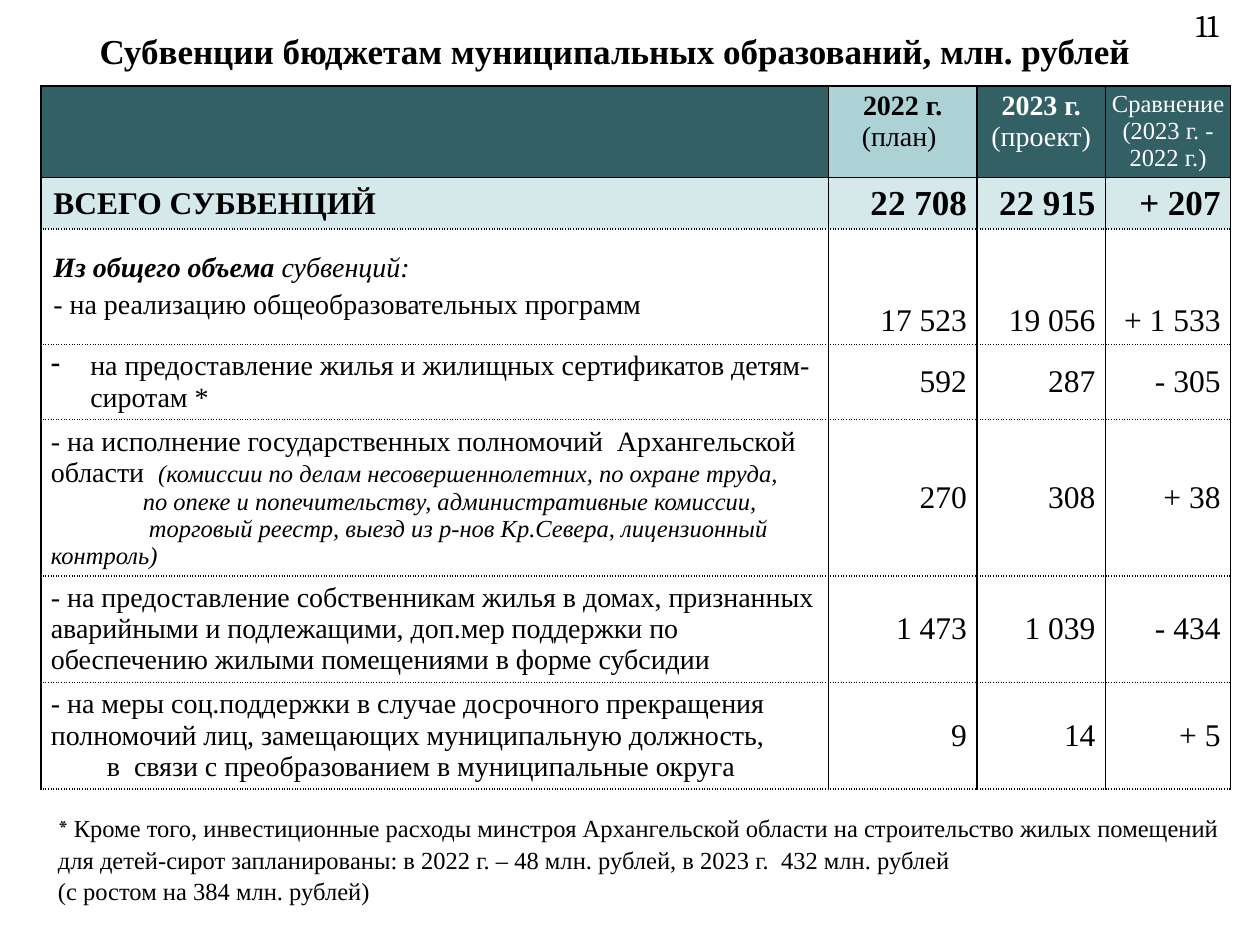
from lxml.etree import SubElement
from pptx import Presentation
from pptx.dml.color import RGBColor
from pptx.enum.text import MSO_ANCHOR, MSO_AUTO_SIZE, PP_ALIGN
from pptx.oxml import parse_xml
from pptx.oxml.ns import nsdecls, qn
from pptx.util import Pt

HUES = {"ink": "000000", "white": "FFFFFF", "dark": "326065",
        "mid": "ADD2D6", "pale": "D6E9EA"}
LEFT, MID, RIGHT = PP_ALIGN.LEFT, PP_ALIGN.CENTER, PP_ALIGN.RIGHT


class Deck:
    """Style and current slide."""
    serif, num = "Times New Roman", "Cambria"

    def __init__(self):
        self.prs = Presentation()
        self.prs.slide_width, self.prs.slide_height = Pt(720), Pt(540)
        self.slide = self.prs.slides.add_slide(self.prs.slide_layouts[1])

    def hue(self, name):
        return RGBColor.from_string(HUES[name])

    def run(self, para, text, size, style="", hue="ink", font=None):
        for i, part in enumerate(text.split("\n")):
            if i:
                para.add_line_break()
            run = para.add_run()
            run.text = part
            face = run.font
            face.name, face.size = font or self.serif, Pt(size)
            face.bold, face.italic = "b" in style, "i" in style
            face.color.rgb = self.hue(hue)

    def para(self, frame, runs, align=LEFT, first=True, gap=0,
             hang=0, indent=0, mark=None):
        para = frame.paragraphs[0] if first else frame.add_paragraph()
        para.alignment, para.space_before = align, Pt(gap)
        props = para._p.get_or_add_pPr()
        props.set("marL", str(Pt(hang)))
        props.set("indent", str(Pt(indent)))
        if mark:
            SubElement(props, qn("a:buChar")).set("char", mark)
        else:
            SubElement(props, qn("a:buNone"))
        for item in runs:
            self.run(para, *item)
        return para

    def place(self, shape, box, anchor):
        shape.left, shape.top, shape.width, shape.height = map(Pt, box)
        frame = shape.text_frame
        frame.word_wrap, frame.auto_size = True, MSO_AUTO_SIZE.NONE
        frame.vertical_anchor = anchor
        return frame

    def title(self, text, box):
        frame = self.place(self.slide.shapes.title, box, MSO_ANCHOR.MIDDLE)
        self.para(frame, [(text, 20, "b")], MID)

    def body(self, paras, box):
        frame = self.place(self.slide.placeholders[1], box, MSO_ANCHOR.TOP)
        for i, runs in enumerate(paras):
            self.para(frame, runs, first=i == 0).line_spacing = 1.07

    def label(self, text, box):
        shape = self.slide.shapes.add_textbox(*map(Pt, box))
        frame = self.place(shape, box, MSO_ANCHOR.BOTTOM)
        self.para(frame, [(text, 18, "", "ink", self.num)], RIGHT)

    def table(self, left, top, cols, rows):
        shape = self.slide.shapes.add_table(
            len(rows), len(cols), Pt(left), Pt(top),
            Pt(sum(cols)), Pt(sum(rows)))
        grid = shape.table
        grid.first_row = grid.horz_banding = False
        for col, width in zip(grid.columns, cols):
            col.width = Pt(width)
        for row, height in zip(grid.rows, rows):
            row.height = Pt(height)
        return grid

    def cell(self, cell, paras, inset, anchor, fill, dashes):
        cell.vertical_anchor = anchor
        (cell.margin_left, cell.margin_top,
         cell.margin_right, cell.margin_bottom) = map(Pt, inset)
        if fill:
            cell.fill.solid()
            cell.fill.fore_color.rgb = self.hue(fill)
        else:
            cell.fill.background()
        for i, item in enumerate(paras):
            self.para(cell.text_frame, first=i == 0, **item)
        # Borders come before the fill: left, right, top, bottom
        props = cell._tc.get_or_add_tcPr()
        for i, (side, dash) in enumerate(zip("LRTB", dashes)):
            props.insert(i, parse_xml(
                f'<a:ln{side} {nsdecls("a")} w="{Pt(1)}"><a:solidFill>'
                f'<a:srgbClr val="{HUES["ink"]}"/></a:solidFill>'
                f'<a:prstDash val="{dash}"/></a:ln{side}>'))


HEAD = [
    ([], "dark"),
    ([[("2022 г. ", 16, "b"), ("(план) ", 16)]], "mid"),
    ([[("2023 г.", 16, "b", "white")], [("(проект)", 16, "", "white")]], "dark"),
    ([[("Сравнение (2023 г. -\n2022 г.)", 14, "", "white")]], "dark"),
]

# Each row: paragraphs of the first cell, then the figures
ROWS = [
    ([dict(runs=[("ВСЕГО СУБВЕНЦИЙ", 18, "b")])],
     ["22 708", "22 915", "+ 207"]),
    ([dict(runs=[("Из общего объема ", 16, "bi"), ("субвенций:", 16, "i")]),
      dict(runs=[("- на реализацию общеобразовательных программ", 16)], gap=3.2)],
     ["17 523", "19 056", "+ 1 533"]),
    ([dict(runs=[("на предоставление жилья и жилищных сертификатов "
                  "детям-сиротам *", 16)], hang=22.5, indent=-22.5, mark="-")],
     ["592", "287", "- 305"]),
    ([dict(runs=[("- на исполнение государственных полномочий  "
                  "Архангельской области  ", 16),
                 ("(комиссии по делам несовершеннолетних, "
                  "по охране труда,", 14, "i")]),
      dict(runs=[("по опеке и попечительству, административные комиссии,",
                  14, "i")], indent=52.5),
      dict(runs=[("торговый реестр, выезд из р-нов Кр.Севера, "
                  "лицензионный контроль)", 14, "i")], indent=56)],
     ["270", "308", "+ 38"]),
    ([dict(runs=[("- ", 16, "i"),
                 ("на предоставление собственникам жилья в домах, признанных "
                  "аварийными и подлежащими, доп.мер поддержки по обеспечению "
                  "жилыми помещениями в форме субсидии", 16)])],
     ["1 473", "1 039", "- 434"]),
    ([dict(runs=[("- на меры соц.поддержки в случае досрочного прекращения "
                  "полномочий лиц, замещающих муниципальную должность,", 16)]),
      dict(runs=[("в  связи с преобразованием в муниципальные округа", 16)],
           indent=32)],
     ["9", "14", "+ 5"]),
]


def main():
    deck = Deck()
    deck.title("Субвенции бюджетам муниципальных образований, млн. рублей",
               (-8.6, 10, 720, 38))

    # Table head
    grid = deck.table(23.3, 49, [450, 85, 73.5, 71.5],
                      [52.5, 29, 66, 42.5, 89.5, 60.8, 60.8])
    for c, (paras, fill) in enumerate(HEAD):
        deck.cell(grid.cell(0, c), [dict(runs=p, align=MID) for p in paras],
                  (2.9,) * 4, MSO_ANCHOR.TOP, fill, ["solid"] * 4)

    # Table rows: the total first, then its parts
    for r, (paras, figures) in enumerate(ROWS, 1):
        total = r == 1
        fill = "pale" if total else None
        dashes = ["solid", "solid", "solid" if total else "sysDot", "sysDot"]
        deck.cell(grid.cell(r, 0), paras, (7.2 if r < 3 else 5.8, 3.6, 7.2, 3.6),
                  MSO_ANCHOR.MIDDLE, fill, dashes)
        anchor = MSO_ANCHOR.BOTTOM if r == 2 else MSO_ANCHOR.MIDDLE
        font = (20, "b") if total else (18, "")
        for c, text in enumerate(figures, 1):
            deck.cell(grid.cell(r, c), [dict(runs=[(text, *font)], align=RIGHT)],
                      (7.2, 3.6, 5.8, 3.6), anchor, fill, dashes)

    # Page number and footnote
    deck.label("11", (643.7, 0, 59.8, 28.8))
    deck.body([
        [("* ", 14, "", "ink", deck.num),
         ("Кроме того, инвестиционные расходы минстроя Архангельской области "
          "на строительство жилых помещений для детей-сирот запланированы: "
          "в 2022 г. – 48 млн. рублей, в 2023 г.  432 млн. рублей", 14)],
        [("(с ростом на 384 млн. рублей)", 14)],
    ], (25.9, 460, 678.2, 58.3))
    deck.prs.save("out.pptx")


if __name__ == "__main__":
    main()
